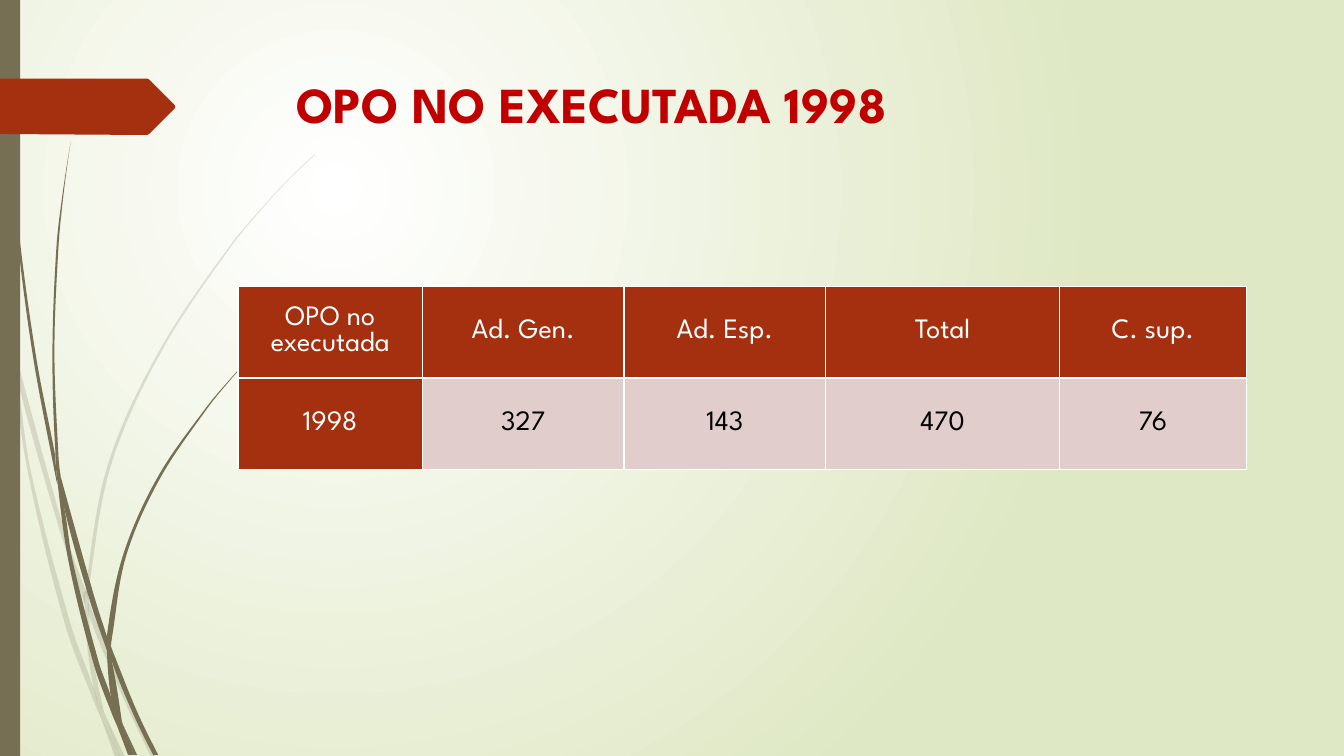
from math import dist

from lxml import etree
from pptx import Presentation
from pptx import util as u
from pptx.dml.color import RGBColor
from pptx.enum import shapes, text
from pptx.oxml.ns import qn

FONT = "League Spartan"
COLORS = {"white": "FFFFFF", "sage": "DFE8C4", "olive": "766F54", "rust": "A53010",
          "red": "C00000", "rose": "E1CDCC", "black": "000000"}

# Each blade of grass is two edges, followed one after the other (inches)
PALE_GRASS = [
    ([(0.11, 3.5), (0.09, 3.22), (0, 2.82)], [(0, 2.99), (0.1, 3.44), (0.11, 3.5)]),
    ([(0.14, 3.45), (0.17, 3.76), (0.58, 5.22), (0.84, 5.99)],
     [(0.85, 5.86), (0.62, 5.2), (0.14, 3.45)]),
    ([(0.88, 5.96), (0.88, 6.1), (1.23, 6.94), (1.5, 7.51)],
     [(1.55, 7.51), (1.27, 6.92), (0.92, 6.07), (0.88, 5.96)]),
    ([(1.05, 7.11), (1.19, 7.51)], [(1.24, 7.51), (1.05, 7.11)]),
    ([(0.11, 3.5), (0.28, 4.7), (0.65, 6.21), (0.92, 6.93), (1.01, 7.14)],
     [(0.99, 7.07), (0.93, 6.83), (0.7, 6.19), (0.31, 4.69), (0.17, 3.76), (0.11, 3.5)]),
    ([(0.84, 5.99), (0.87, 6.46), (0.93, 6.83), (0.96, 6.92), (1.05, 7.11)],
     [(1.03, 7.06), (0.91, 6.46), (0.88, 6.1), (0.84, 5.99)]),
    ([(0.88, 5.96), (0.88, 5.84), (1.1, 4.62), (1.6, 3.49), (2.29, 2.45),
      (2.68, 1.98), (2.9, 1.75), (3.12, 1.54)],
     [(3.12, 1.53), (2.89, 1.75), (2.68, 1.97), (2.28, 2.44), (1.58, 3.48),
      (1.07, 4.61), (0.85, 5.84), (0.88, 5.96)]),
    ([(1.01, 7.14), (1.14, 7.51)], [(1.19, 7.51), (1.01, 7.14)]),
    ([(0.84, 5.99), (0.88, 6.08), (0.88, 6.1)], [(0.88, 5.96), (0.85, 5.86), (0.84, 5.99)]),
    ([(0.93, 6.83), (0.99, 7.07), (1.01, 7.14), (1.19, 7.51)],
     [(1.19, 7.51), (1.05, 7.11), (0.96, 6.92), (0.93, 6.83)]),
]
DARK_GRASS = [
    ([(0.03, 0), (0.04, 0.48), (0.07, 1.1), (0.17, 2.33), (0.33, 3.55), (0.56, 4.77),
      (0.57, 4.81)],
     [(0.55, 4.57), (0.55, 4.53), (0.36, 3.55), (0.19, 2.32), (0.08, 1.09), (0.05, 0.48),
      (0.04, 0)]),
    ([(0.6, 4.72), (0.64, 5.05), (0.88, 5.92), (1.06, 6.45)],
     [(1.06, 6.31), (0.93, 5.9), (0.6, 4.72)]),
    ([(1.1, 6.41), (1.11, 6.56), (1.32, 7.08), (1.52, 7.49)],
     [(1.57, 7.49), (1.36, 7.06), (1.13, 6.49), (1.1, 6.41)]),
    ([(0.57, 4.77), (0.68, 5.57), (0.93, 6.59), (1.11, 7.08), (1.17, 7.22)],
     [(1.16, 7.17), (1.1, 6.91), (0.98, 6.57), (0.72, 5.56), (0.64, 5.05), (0.57, 4.77)]),
    ([(0.6, 4.72), (0.58, 4.53), (0.54, 3.49), (0.58, 2.45), (0.63, 1.93), (0.7, 1.41)],
     [(0.7, 1.41), (0.62, 1.93), (0.56, 2.45), (0.52, 3.49), (0.55, 4.49), (0.6, 4.72)]),
    ([(1.22, 7.19), (1.33, 7.49)], [(1.36, 7.49), (1.22, 7.19)]),
    ([(0.55, 4.49), (0.57, 4.77), (0.64, 5.05)], [(0.6, 4.72), (0.55, 4.49)]),
    ([(1.1, 6.41), (1.11, 6.33), (1.25, 5.52), (1.58, 4.76), (2.05, 4.06), (2.31, 3.74),
      (2.45, 3.59), (2.61, 3.44)],
     [(2.6, 3.44), (2.45, 3.58), (2.31, 3.73), (2.04, 4.05), (1.56, 4.74), (1.22, 5.51),
      (1.06, 6.31), (1.1, 6.41)]),
    ([(1.17, 7.22), (1.27, 7.49)], [(1.31, 7.49), (1.17, 7.22)]),
    ([(1.06, 6.45), (1.1, 6.91), (1.16, 7.06), (1.22, 7.19)],
     [(1.21, 7.16), (1.11, 6.56), (1.06, 6.45)]),
    ([(1.06, 6.31), (1.06, 6.45), (1.11, 6.56)], [(1.1, 6.41), (1.06, 6.31)]),
    ([(1.1, 6.91), (1.17, 7.22), (1.3, 7.49)], [(1.33, 7.49), (1.22, 7.19), (1.1, 6.91)]),
]
ARROW = [(0, 0.78), (1.46, 0.78), (1.48, 0.79), (1.73, 1.04), (1.74, 1.06), (1.73, 1.08),
         (1.48, 1.33), (1.46, 1.34), (0, 1.33)]
COLUMN_WIDTHS = [1.83, 2, 2, 2.32, 1.85]
ROWS = [["OPO no executada", "Ad. Gen.", "Ad. Esp.", "Total", "C. sup."],
        ["1998", "327", "143", "470", "76"]]


def color(name):
    return RGBColor.from_string(COLORS[name])


def paint(shape, name, opacity=100):
    shape.shadow.inherit = False
    shape.fill.solid()
    shape.fill.fore_color.rgb = color(name)
    shape.line.fill.background()
    if opacity < 100:
        tone = shape.fill._xPr.find(qn("a:solidFill"))[0]
        etree.SubElement(tone, qn("a:alpha")).set("val", str(opacity * 1000))


def add_outline(container, points, name, opacity=100):
    corners = [(u.Inches(x), u.Inches(y)) for x, y in points]
    builder = container.build_freeform(*corners[0])
    builder.add_line_segments(corners[1:], close=True)
    shape = builder.convert_to_shape()
    paint(shape, name, opacity)
    return shape


def handle(knot, toward, before, after):
    """Place a Bezier handle along the chord between a knot's neighbours."""
    reach = dist(knot, toward) / 3 / dist(before, after)
    return tuple(k + (a - b) * reach for k, b, a in zip(knot, before, after))


def midpoint(a, b):
    return tuple((p + q) / 2 for p, q in zip(a, b))


def bend(lines, knots):
    """Turn the straight segments of one edge into smooth curves."""
    for i, line in enumerate(lines):
        start, end = knots[i], knots[i + 1]
        first, last = i == 0, i == len(lines) - 1
        leave = start if first else handle(start, end, knots[i - 1], end)
        arrive = end if last else handle(end, start, knots[i + 2], start)
        if first:
            leave = midpoint(start, arrive)
        if last:
            arrive = midpoint(end, leave)
        line.tag = qn("a:cubicBezTo")
        for place, (x, y) in enumerate((leave, arrive)):
            line.insert(place, etree.Element(qn("a:pt"), x=str(round(x)), y=str(round(y))))


def add_grass(page, blades, opacity=100):
    group = page.shapes.add_group_shape()
    for first_edge, second_edge in blades:
        shape = add_outline(group.shapes, first_edge + second_edge, "olive", opacity)
        knots = [(int(point.get("x")), int(point.get("y")))
                 for point in shape.element.iter(qn("a:pt"))]
        lines = list(shape.element.iter(qn("a:lnTo")))
        split = len(first_edge)
        curves = [(lines[:split - 1], knots[:split]), (lines[split:], knots[split:])]
        for edge_lines, edge_knots in curves:
            if len(edge_knots) > 2:
                bend(edge_lines, edge_knots)


def add_background(page):
    fill = page.background.fill
    fill.gradient()
    for stop, name in zip(fill.gradient_stops, ("white", "sage")):
        stop.color.rgb = color(name)
    gradient = page.element.find(".//" + qn("a:gradFill"))
    gradient.remove(gradient.find(qn("a:lin")))
    circle = etree.SubElement(gradient, qn("a:path"))
    circle.set("path", "circle")
    center = etree.SubElement(circle, qn("a:fillToRect"))
    for side, percent in zip("ltrb", (50, 50, 100, 100)):
        center.set(side, str(percent * 1000))


def add_span(para, words, size, name, bold=False):
    span = para.add_run()
    span.text = words
    span.font.name, span.font.size, span.font.bold = FONT, u.Pt(size), bold
    span.font.color.rgb = color(name)


def add_title(page, words):
    box = page.shapes.add_textbox(u.Inches(2.84), u.Inches(0.68), u.Inches(9.75), u.Inches(1.4))
    box.text_frame.word_wrap = True
    add_span(box.text_frame.paragraphs[0], words, 36, "red", bold=True)


def add_borders(cell):
    properties = cell._tc.get_or_add_tcPr()
    for place, side in enumerate("LRTB"):
        border = etree.Element(qn(f"a:ln{side}"), w=str(u.Pt(1)))
        solid = etree.SubElement(border, qn("a:solidFill"))
        etree.SubElement(solid, qn("a:srgbClr"), val=COLORS["white"])
        properties.insert(place, border)


def add_figures(page):
    table = page.shapes.add_table(len(ROWS), len(COLUMN_WIDTHS), u.Inches(2.36), u.Inches(2.84),
                                  u.Inches(sum(COLUMN_WIDTHS)), u.Inches(1.82)).table
    table.first_row = table.horz_banding = False
    for column, width in zip(table.columns, COLUMN_WIDTHS):
        column.width = u.Inches(width)
    for i, row in enumerate(ROWS):
        for j, words in enumerate(row):
            cell = table.cell(i, j)
            heading = i == 0 or j == 0
            cell.fill.solid()
            cell.fill.fore_color.rgb = color("rust" if heading else "rose")
            cell.vertical_anchor = text.MSO_ANCHOR.MIDDLE
            cell.margin_left = cell.margin_right = u.Inches(0.07)
            cell.margin_top = cell.margin_bottom = 0
            para = cell.text_frame.paragraphs[0]
            para.alignment = text.PP_ALIGN.CENTER
            add_span(para, words, 20, "white" if heading else "black")
            add_borders(cell)


def main():
    deck = Presentation()
    deck.slide_width, deck.slide_height = u.Inches(13.33), u.Inches(7.5)
    page = deck.slides.add_slide(deck.slide_layouts[6])
    # Backdrop
    add_background(page)
    add_grass(page, PALE_GRASS, opacity=20)
    add_grass(page, DARK_GRASS)
    bar = page.shapes.add_shape(shapes.MSO_SHAPE.RECTANGLE, 0, 0, u.Inches(0.2), u.Inches(7.5))
    paint(bar, "olive")
    add_outline(page.shapes, ARROW, "rust")
    # Content
    add_title(page, "OPO NO EXECUTADA 1998")
    add_figures(page)
    deck.save("out.pptx")


if __name__ == "__main__":
    main()
